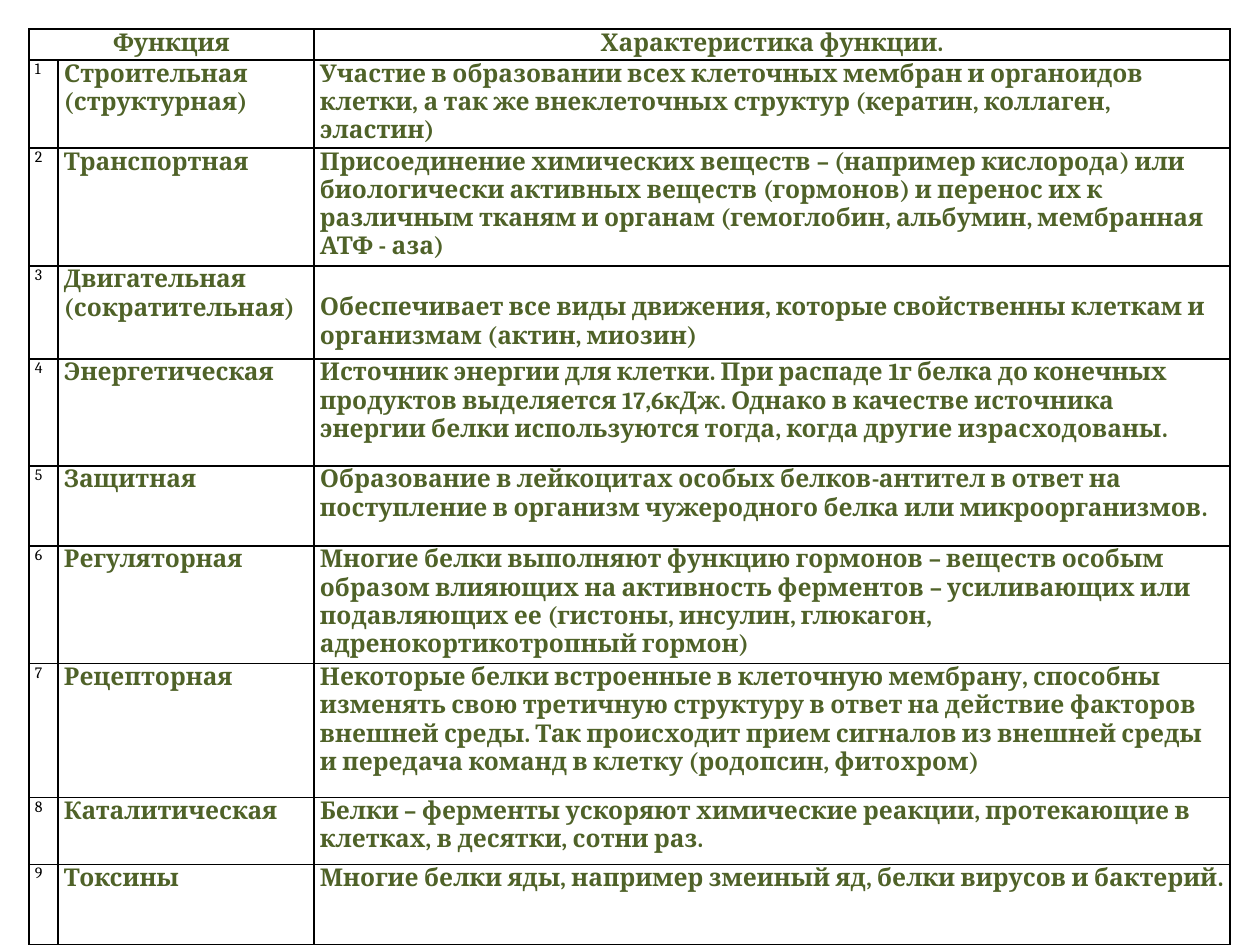
from typing import NamedTuple

from lxml import etree
from pptx import Presentation, util as u
from pptx.dml.color import RGBColor
from pptx.enum import text
from pptx.oxml import ns

PX = 914400 / 126
COLORS = {"green": "4F6228", "black": "000000"}
FONT = "Cambria"
LEFT, TOP = 29, 29
COLS = (29, 256, 916)
HEADER_H = 31
INSET = 6


class Function(NamedTuple):
    height: int
    name: str
    about: str
    drop: int = 0  # extra space above the description


FUNCTIONS = [
    Function(88, "Строительная (структурная)",
             "Участие в образовании всех клеточных мембран и органоидов клетки, "
             "а так же внеклеточных структур (кератин, коллаген, эластин)"),
    Function(118, "Транспортная",
             "Присоединение химических веществ – (например кислорода) или "
             "биологически активных веществ (гормонов) и перенос их к различным "
             "тканям и органам (гемоглобин, альбумин, мембранная АТФ - аза)"),
    Function(93, "Двигательная (сократительная)",
             "Обеспечивает все виды движения, которые свойственны клеткам и "
             "организмам (актин, миозин)", drop=28),
    Function(107, "Энергетическая",
             "Источник энергии для клетки. При распаде 1г белка до конечных "
             "продуктов выделяется 17,6кДж. Однако в качестве источника энергии "
             "белки используются тогда, когда другие израсходованы."),
    Function(80, "Защитная",
             "Образование в лейкоцитах особых белков-антител в ответ на "
             "поступление в организм чужеродного белка или микроорганизмов."),
    Function(118, "Регуляторная",
             "Многие белки выполняют функцию гормонов – веществ особым образом "
             "влияющих на активность ферментов – усиливающих или подавляющих ее "
             "(гистоны, инсулин, глюкагон, адренокортикотропный гормон)"),
    Function(134, "Рецепторная",
             "Некоторые белки встроенные в клеточную мембрану, способны изменять "
             "свою третичную структуру в ответ на действие факторов внешней "
             "среды. Так происходит прием сигналов из внешней среды и передача "
             "команд в клетку (родопсин, фитохром)"),
    Function(67, "Каталитическая",
             "Белки – ферменты ускоряют химические реакции, протекающие в "
             "клетках, в десятки, сотни раз."),
    Function(80, "Токсины",
             "Многие белки яды, например змеиный яд, белки вирусов и бактерий."),
]


def px(n: int) -> u.Emu:
    return u.Emu(round(n * PX))


def write(cell, words: str, *, size: int = 14, color: str = "green",
          bold: bool = True, align=text.PP_ALIGN.LEFT, drop: int = 0) -> None:
    cell.margin_left = cell.margin_right = px(INSET)
    cell.margin_top, cell.margin_bottom = px(drop), 0
    cell.vertical_anchor = text.MSO_ANCHOR.TOP
    p = cell.text_frame.paragraphs[0]
    p.alignment = align
    r = p.add_run()
    r.text = words
    r.font.name, r.font.size, r.font.bold = FONT, u.Pt(size), bold
    r.font.color.rgb = RGBColor.from_string(COLORS[color])


def outline(cell) -> None:
    """Give a cell 1 pt borders and no fill."""
    tc_pr = cell._tc.get_or_add_tcPr()
    for side in ("a:lnL", "a:lnR", "a:lnT", "a:lnB"):
        ln = etree.SubElement(tc_pr, ns.qn(side), w=str(u.Pt(1)))
        fill = etree.SubElement(ln, ns.qn("a:solidFill"))
        etree.SubElement(fill, ns.qn("a:srgbClr"), val=COLORS["black"])
    cell.fill.background()


def main() -> None:
    prs = Presentation()
    prs.slide_width, prs.slide_height = u.Inches(10), u.Inches(7.5)
    s = prs.slides.add_slide(prs.slide_layouts[6])

    # Table grid
    heights = [HEADER_H] + [f.height for f in FUNCTIONS]
    frame = s.shapes.add_table(len(heights), len(COLS), px(LEFT), px(TOP),
                               px(sum(COLS)), px(sum(heights)))
    table = frame.table
    table.first_row = table.horz_banding = False
    for column, width in zip(table.columns, COLS):
        column.width = px(width)
    for row, height in zip(table.rows, heights):
        row.height = px(height)
    for cell in table.iter_cells():
        outline(cell)

    # Header
    table.cell(0, 0).merge(table.cell(0, 1))
    write(table.cell(0, 0), "Функция", align=text.PP_ALIGN.CENTER)
    write(table.cell(0, 2), "Характеристика функции.", align=text.PP_ALIGN.CENTER)

    # Protein functions
    for i, f in enumerate(FUNCTIONS, start=1):
        write(table.cell(i, 0), str(i), size=9, color="black", bold=False)
        write(table.cell(i, 1), f.name)
        write(table.cell(i, 2), f.about, drop=f.drop)

    prs.save("out.pptx")


if __name__ == "__main__":
    main()
